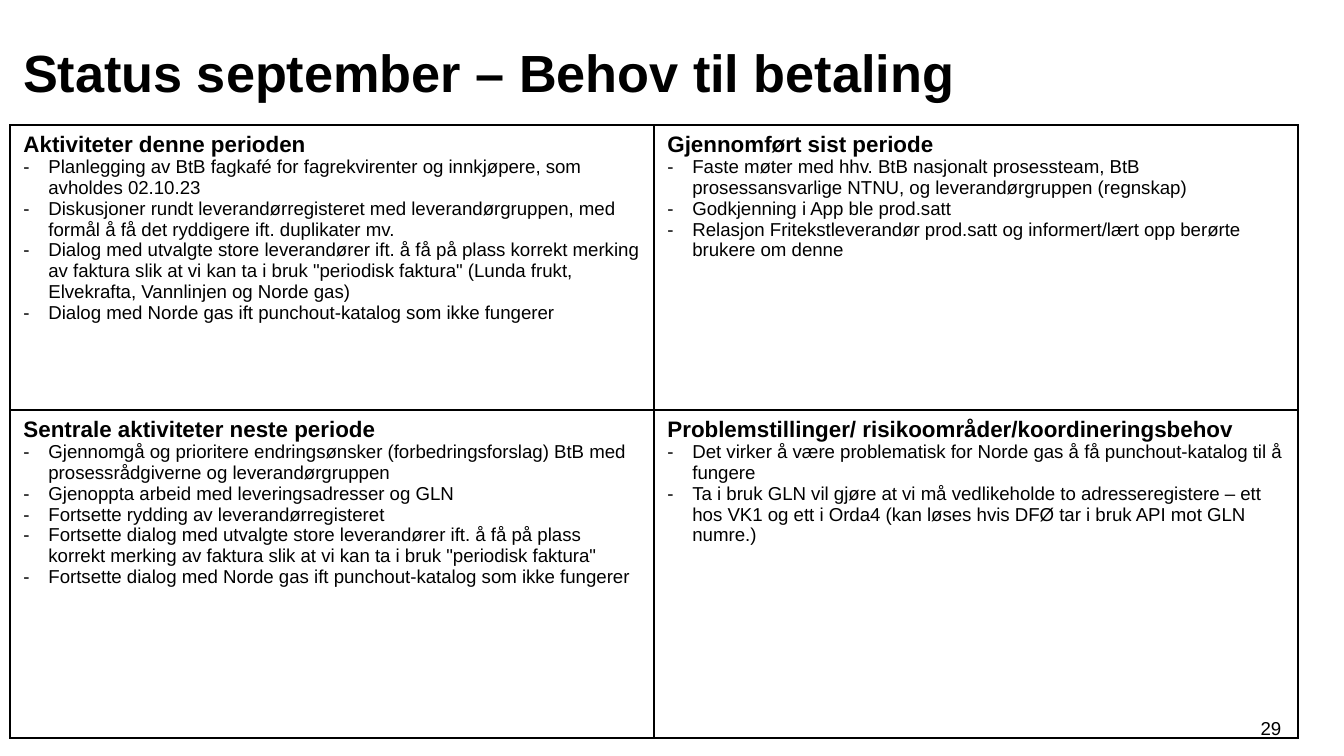
"""Build the September status slide: a title, a two-by-two status table and a page number."""
from dataclasses import dataclass
from itertools import product

from lxml.etree import SubElement
from pptx import Presentation
from pptx.dml.color import RGBColor
from pptx.enum.text import MSO_ANCHOR, PP_ALIGN
from pptx.oxml.ns import qn
from pptx.slide import Slide
from pptx.table import _Cell
from pptx.util import Emu, Pt

EMU_PER_PX = 914400 / 134.4


@dataclass(frozen=True)
class Theme:
    font: str = "Arial"
    ink: str = "000000"
    title: int = 28
    heading: int = 12
    body: int = 10
    border: int = 1


@dataclass(frozen=True)
class Box:
    left: int
    top: int
    width: int
    height: int


@dataclass(frozen=True)
class Label:
    text: str
    box: Box
    size: int
    bold: bool
    align: PP_ALIGN
    anchor: MSO_ANCHOR
    margin_x: int
    margin_bottom: int


@dataclass(frozen=True)
class Panel:
    heading: str
    items: tuple[str, ...]


THEME = Theme()
TABLE = Box(10, 125, 1288, 613)
ROW_HEIGHTS = (285, 328)
COLUMNS = 2
BULLET_INDENT = 25

LABELS = (
    Label("29", Box(1246, 708, 50, 40), THEME.body, False,
          PP_ALIGN.CENTER, MSO_ANCHOR.MIDDLE, 0, 0),
    Label("Status september – Behov til betaling", Box(10, 17, 1232, 96), THEME.title, True,
          PP_ALIGN.LEFT, MSO_ANCHOR.BOTTOM, 13, 10),
)

PANELS = (
    Panel("Aktiviteter denne perioden", (
        "Planlegging av BtB fagkafé for fagrekvirenter og innkjøpere, som avholdes 02.10.23",
        "Diskusjoner rundt leverandørregisteret med leverandørgruppen, med formål å få det "
        "ryddigere ift. duplikater mv.",
        "Dialog med utvalgte store leverandører ift. å få på plass korrekt merking av faktura "
        'slik at vi kan ta i bruk "periodisk faktura" (Lunda frukt, Elvekrafta, Vannlinjen '
        "og Norde gas)",
        "Dialog med Norde gas ift punchout-katalog som ikke fungerer",
    )),
    Panel("Gjennomført sist periode", (
        "Faste møter med hhv. BtB nasjonalt prosessteam, BtB prosessansvarlige NTNU, og "
        "leverandørgruppen (regnskap)",
        "Godkjenning i App ble prod.satt",
        "Relasjon Fritekstleverandør prod.satt og informert/lært opp berørte brukere om denne",
    )),
    Panel("Sentrale aktiviteter neste periode", (
        "Gjennomgå og prioritere endringsønsker (forbedringsforslag) BtB med "
        "prosessrådgiverne og leverandørgruppen",
        "Gjenoppta arbeid med leveringsadresser og GLN",
        "Fortsette rydding av leverandørregisteret",
        "Fortsette dialog med utvalgte store leverandører ift. å få på plass korrekt merking "
        'av faktura slik at vi kan ta i bruk "periodisk faktura"',
        "Fortsette dialog med Norde gas ift punchout-katalog som ikke fungerer",
    )),
    Panel("Problemstillinger/ risikoområder/koordineringsbehov", (
        "Det virker å være problematisk for Norde gas å få punchout-katalog til å fungere",
        "Ta i bruk GLN vil gjøre at vi må vedlikeholde to adresseregistere – ett hos VK1 og "
        "ett i Orda4 (kan løses hvis DFØ tar i bruk API mot GLN numre.)",
    )),
)


def px(n: int) -> Emu:
    return Emu(round(n * EMU_PER_PX))


def place(box: Box) -> tuple[Emu, ...]:
    return px(box.left), px(box.top), px(box.width), px(box.height)


def add_run(p, text: str, size: int, bold: bool = False) -> None:
    r = p.add_run()
    r.text = text
    r.font.name = THEME.font
    r.font.size = Pt(size)
    r.font.bold = bold
    r.font.color.rgb = RGBColor.from_string(THEME.ink)


def add_label(s: Slide, label: Label) -> None:
    tf = s.shapes.add_textbox(*place(label.box)).text_frame
    tf.word_wrap = True
    tf.vertical_anchor = label.anchor
    tf.margin_left = tf.margin_right = px(label.margin_x)
    tf.margin_top = 0
    tf.margin_bottom = px(label.margin_bottom)
    p = tf.paragraphs[0]
    p.alignment = label.align
    add_run(p, label.text, label.size, label.bold)


def set_bullet(p) -> None:
    pPr = p._p.get_or_add_pPr()
    pPr.set("marL", str(px(BULLET_INDENT)))
    pPr.set("indent", str(-px(BULLET_INDENT)))
    SubElement(pPr, qn("a:buFont"), typeface=THEME.font)
    SubElement(pPr, qn("a:buChar"), char="-")


def set_borders(cell: _Cell) -> None:
    tcPr = cell._tc.get_or_add_tcPr()
    for i, side in enumerate(("lnL", "lnR", "lnT", "lnB")):
        ln = tcPr.makeelement(qn(f"a:{side}"), {"w": str(Pt(THEME.border))})
        fill = SubElement(ln, qn("a:solidFill"))
        SubElement(fill, qn("a:srgbClr"), val=THEME.ink)
        tcPr.insert(i, ln)


def fill_cell(cell: _Cell, panel: Panel) -> None:
    cell.fill.background()
    set_borders(cell)
    tf = cell.text_frame
    add_run(tf.paragraphs[0], panel.heading, THEME.heading, bold=True)
    for item in panel.items:
        p = tf.add_paragraph()
        set_bullet(p)
        add_run(p, item, THEME.body)


def add_status_table(s: Slide) -> None:
    table = s.shapes.add_table(len(ROW_HEIGHTS), COLUMNS, *place(TABLE)).table
    table.first_row = table.horz_banding = False
    for column in table.columns:
        column.width = px(TABLE.width // COLUMNS)
    for row, height in zip(table.rows, ROW_HEIGHTS):
        row.height = px(height)
    for (i, j), panel in zip(product(range(len(ROW_HEIGHTS)), range(COLUMNS)), PANELS):
        fill_cell(table.cell(i, j), panel)


def main() -> None:
    prs = Presentation()
    prs.slide_width, prs.slide_height = px(1344), px(756)
    s = prs.slides.add_slide(prs.slide_layouts[6])
    for label in LABELS:
        add_label(s, label)
    add_status_table(s)
    prs.save("out.pptx")


if __name__ == "__main__":
    main()
